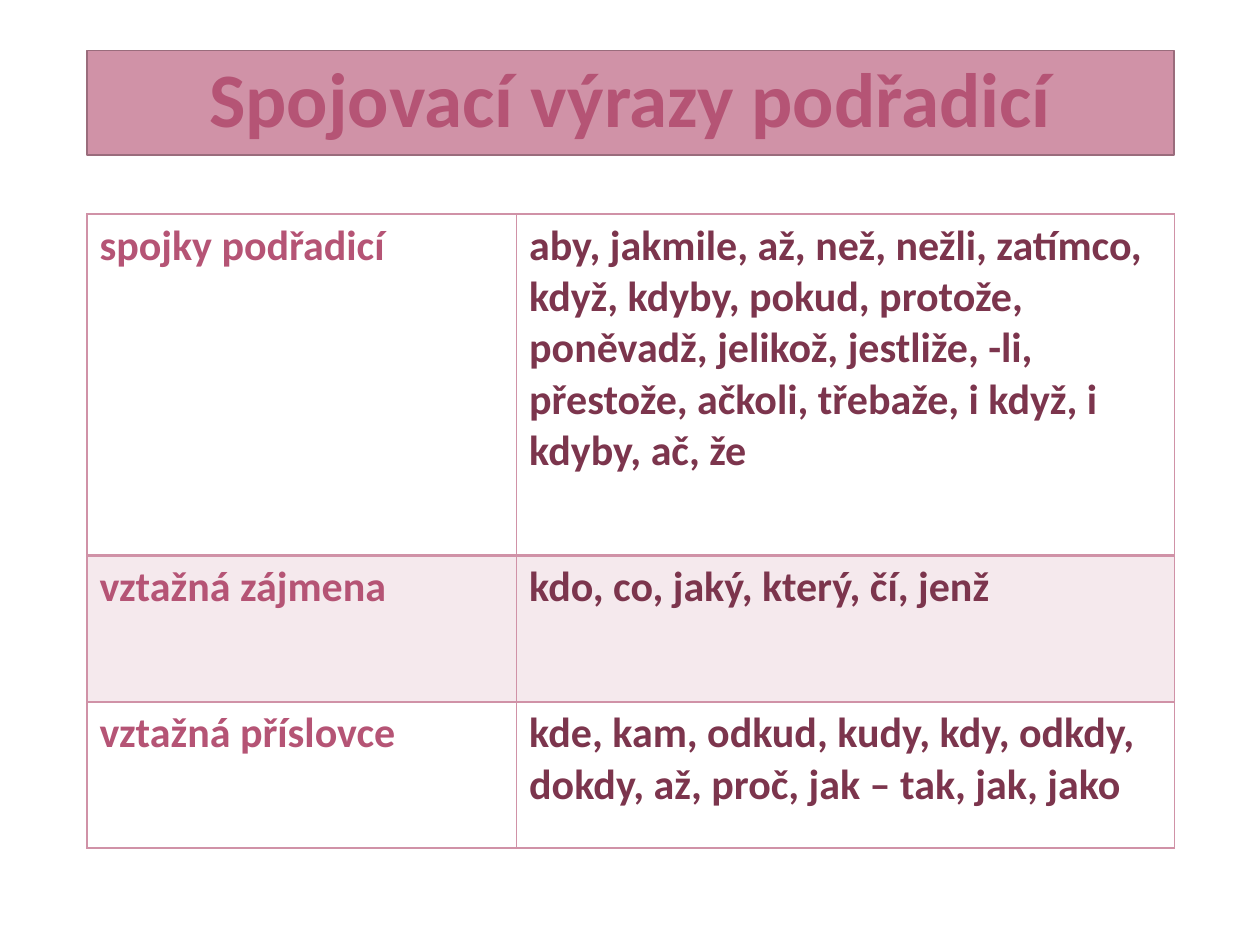
from dataclasses import dataclass

from lxml import etree
from pptx import Presentation
from pptx.dml import color
from pptx.enum import text
from pptx.oxml import ns
from pptx.util import Inches, Pt


@dataclass(frozen=True)
class Theme:
    font: str = "Calibri"
    rose: str = "D092A7"
    edge: str = "9A6C7C"
    label: str = "B55475"
    words: str = "7C354D"
    head: int = 44
    body: int = 24
    tint: int = 20


@dataclass(frozen=True)
class Row:
    label: str
    words: str
    height: float
    base: float = 1
    tinted: bool = False


THEME = Theme()
LEFT, WIDTH = 0.69, 8.63
COLS = (3.41, 5.22)
ROWS = (
    Row("spojky podřadicí",
        "aby, jakmile, až, než, nežli, zatímco, když, kdyby, pokud, protože, "
        "poněvadž, jelikož, jestliže, -li, přestože, ačkoli, třebaže, i když, "
        "i kdyby, ač, že", 2.71, base=2),
    Row("vztažná zájmena", "kdo, co, jaký, který, čí, jenž", 1.16, tinted=True),
    Row("vztažná příslovce",
        "kde, kam, odkud, kudy, kdy, odkdy, dokdy, až, proč, jak – tak, jak, jako",
        1.16),
)


def rgb(value: str) -> color.RGBColor:
    return color.RGBColor.from_string(value)


def write(para, words: str, size: int, tone: str) -> None:
    run = para.add_run()
    run.text = words
    font = run.font
    font.name, font.size, font.bold = THEME.font, Pt(size), True
    font.color.rgb = rgb(tone)


def border(cell, sides: dict[str, float]) -> None:
    props = cell._tc.get_or_add_tcPr()
    for spot, (side, width) in enumerate(sides.items()):
        line = etree.Element(ns.qn(f"a:ln{side}"), w=str(Pt(width)))
        fill = etree.SubElement(line, ns.qn("a:solidFill"))
        etree.SubElement(fill, ns.qn("a:srgbClr"), val=THEME.rose)
        props.insert(spot, line)


def shade(cell, tinted: bool) -> None:
    if not tinted:
        cell.fill.background()
        return
    cell.fill.solid()
    cell.fill.fore_color.rgb = rgb(THEME.rose)
    tone = cell._tc.tcPr.find(".//" + ns.qn("a:srgbClr"))
    etree.SubElement(tone, ns.qn("a:alpha"), val=str(THEME.tint * 1000))


def draw_title(slide, words: str) -> None:
    title = slide.shapes.title
    title.left, title.top = Inches(LEFT), Inches(0.4)
    title.width, title.height = Inches(WIDTH), Inches(0.83)
    title.fill.solid()
    title.fill.fore_color.rgb = rgb(THEME.rose)
    title.line.color.rgb = rgb(THEME.edge)
    title.line.width = Pt(1)
    frame = title.text_frame
    frame.auto_size = text.MSO_AUTO_SIZE.NONE
    frame.vertical_anchor = text.MSO_ANCHOR.MIDDLE
    para = frame.paragraphs[0]
    para.alignment = text.PP_ALIGN.CENTER
    para.line_spacing = 0.9
    write(para, words, THEME.head, THEME.label)


def draw_table(slide, rows: tuple[Row, ...]) -> None:
    height = sum(row.height for row in rows)
    table = slide.shapes.add_table(
        len(rows), len(COLS), Inches(LEFT), Inches(1.7),
        Inches(WIDTH), Inches(height)).table
    table.first_row = table.horz_banding = False
    for col, width in zip(table.columns, COLS):
        col.width = Inches(width)
    above = 1
    for i, row in enumerate(rows):
        table.rows[i].height = Inches(row.height)
        pairs = ((row.label, THEME.label), (row.words, THEME.words))
        for cell, (words, tone) in zip(table.rows[i].cells, pairs):
            write(cell.text_frame.paragraphs[0], words, THEME.body, tone)
            shade(cell, row.tinted)
            border(cell, {"L": 1, "R": 1, "T": above, "B": row.base})
        above = row.base


def main() -> None:
    """Build the slide on subordinating connectives."""
    deck = Presentation()
    deck.slide_width, deck.slide_height = Inches(10), Inches(7.5)
    slide = deck.slides.add_slide(deck.slide_layouts[5])
    draw_title(slide, "Spojovací výrazy podřadicí")
    draw_table(slide, ROWS)
    deck.save("out.pptx")


if __name__ == "__main__":
    main()
